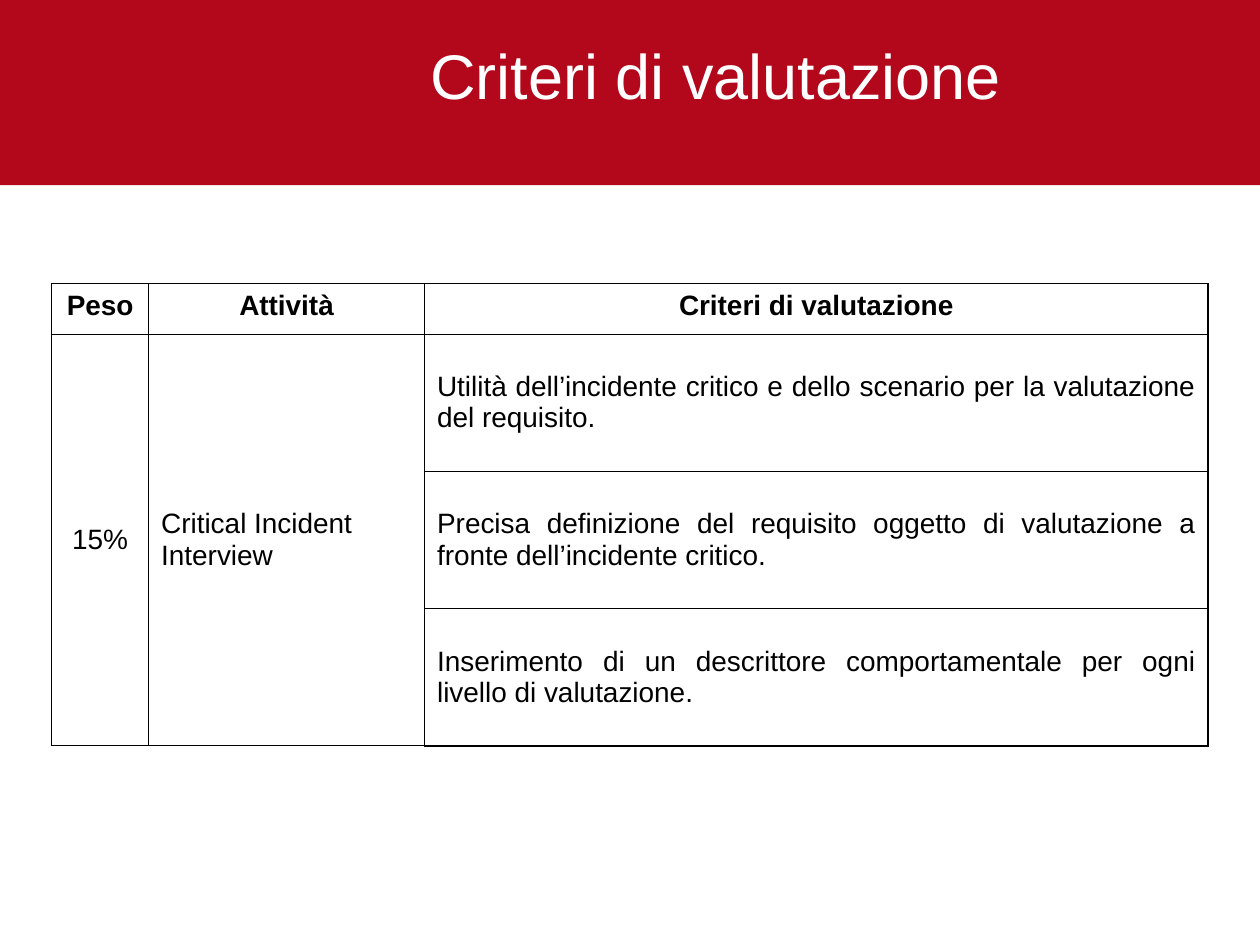
from lxml import etree
from pptx import Presentation
from pptx.dml.color import RGBColor
from pptx.enum.shapes import MSO_SHAPE
from pptx.enum.text import MSO_ANCHOR, PP_ALIGN
from pptx.oxml.ns import qn
from pptx.util import Inches, Pt

RECT = MSO_SHAPE.RECTANGLE
TOP, MID = MSO_ANCHOR.TOP, MSO_ANCHOR.MIDDLE
LEFT, CENTER, JUST = PP_ALIGN.LEFT, PP_ALIGN.CENTER, PP_ALIGN.JUSTIFY

RED, WHITE, BLACK = "B3071B", "FFFFFF", "000000"
COLS = [0.77, 2.19, 6.22]
ROWS = [0.4] + [1.09] * 3
HEADS = ["Peso", "Attività", "Criteri di valutazione"]
RULES = [
    "Utilità dell’incidente critico e dello scenario per la valutazione del requisito.",
    "Precisa definizione del requisito oggetto di valutazione a fronte dell’incidente critico.",
    "Inserimento di un descrittore comportamentale per ogni livello di valutazione.",
]


def color(code):
    return RGBColor.from_string(code)


def style(item, values):
    for name, value in values.items():
        setattr(item, name, value)


def write(frame, text, align, size, code, bold=False):
    frame.text = text
    para = frame.paragraphs[0]
    para.alignment = align
    style(para.font, {"name": "Arial", "size": Pt(size), "bold": bold})
    para.font.color.rgb = color(code)


def add_title(slide, text):
    title = slide.shapes.title
    style(title, {"left": Inches(2.09), "top": 0,
                  "width": Inches(7.18), "height": Inches(1.18)})
    pad = Inches(0.05)
    style(title.text_frame, {"margin_left": pad, "margin_right": pad,
                             "margin_top": pad, "margin_bottom": pad,
                             "vertical_anchor": MID, "word_wrap": True})
    write(title.text_frame, text, CENTER, 36, WHITE)


def add_band(slide):
    band = slide.shapes.add_shape(RECT, 0, Inches(-0.03), Inches(10.01), Inches(1.5))
    band.shadow.inherit = False
    band.fill.solid()
    band.fill.fore_color.rgb = color(RED)
    band.line.fill.background()
    slide.shapes.title.element.addprevious(band.element)


def add_lines(cell, row, col):
    outer = {"lnL": col == 0, "lnR": col == len(COLS) - 1,
             "lnT": row == 0, "lnB": row == len(ROWS) - 1}
    props = cell._tc.get_or_add_tcPr()
    for side, edge in outer.items():
        line = etree.SubElement(props, qn("a:" + side), w=str(Pt(1 if edge else 0.5)))
        fill = etree.SubElement(line, qn("a:solidFill"))
        etree.SubElement(fill, qn("a:srgbClr"), val=BLACK)


def add_grid(slide):
    frame = slide.shapes.add_table(len(ROWS), len(COLS), Inches(0.41), Inches(2.25),
                                   Inches(sum(COLS)), Inches(sum(ROWS)))
    table = frame.table
    style(table, {"first_row": False, "horz_banding": False})
    for col, width in zip(table.columns, COLS):
        col.width = Inches(width)
    for row, height in zip(table.rows, ROWS):
        row.height = Inches(height)
    for r in range(len(ROWS)):
        for c in range(len(COLS)):
            cell = table.cell(r, c)
            add_lines(cell, r, c)
            cell.fill.background()
            cell.vertical_anchor = MID if r else TOP
    for c, text in enumerate(HEADS):
        write(table.cell(0, c).text_frame, text, CENTER, 16, BLACK, True)
    for c, (text, align) in enumerate([("15%", CENTER), ("Critical Incident Interview", LEFT)]):
        cell = table.cell(1, c)
        cell.merge(table.cell(len(RULES), c))
        write(cell.text_frame, text, align, 16, BLACK)
    for r, text in enumerate(RULES, 1):
        cell = table.cell(r, 2)
        cell.fill.solid()
        cell.fill.fore_color.rgb = color(WHITE)
        write(cell.text_frame, text, JUST, 16, BLACK)


def main():
    deck = Presentation()
    style(deck, {"slide_width": Inches(10), "slide_height": Inches(7.5)})
    slide = deck.slides.add_slide(deck.slide_layouts[5])
    add_title(slide, "Criteri di valutazione")
    add_band(slide)
    add_grid(slide)
    deck.save("out.pptx")


if __name__ == "__main__":
    main()
